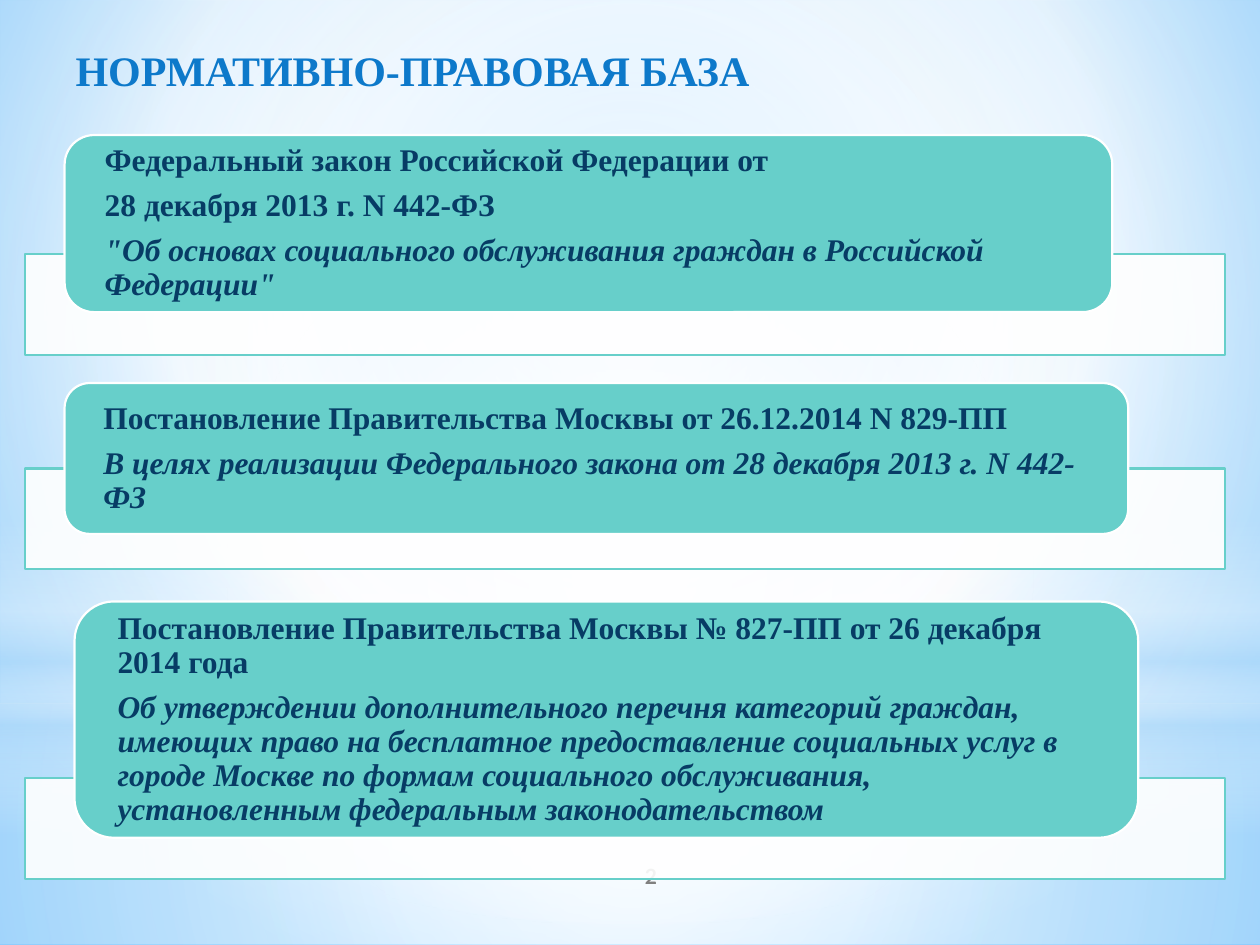
from lxml import etree
from pptx import Presentation
from pptx.dml.color import RGBColor
from pptx.enum import shapes, text
from pptx.oxml.ns import qn
from pptx.util import Pt

BLUE = RGBColor(0x0D, 0x79, 0xCA)
NAVY = RGBColor(0x07, 0x3C, 0x65)
TEAL = RGBColor(0x67, 0xCF, 0xCA)
WHITE = RGBColor(0xFF, 0xFF, 0xFF)
SKY = RGBColor(0xB4, 0xDC, 0xFA)
PALE = RGBColor(0x9E, 0xD5, 0xFF)
DEEP = RGBColor(0x5B, 0xB9, 0xFF)
GREY = RGBColor(0x80, 0x80, 0x80)
SERIF = "Times New Roman"
BOX = shapes.MSO_SHAPE.RECTANGLE
OVAL = shapes.MSO_SHAPE.OVAL
ROUND = shapes.MSO_SHAPE.ROUNDED_RECTANGLE


def shade(grad, stops, focus=None):
    """Fill a gradFill element: radial around focus, or top to bottom."""
    for kid in list(grad):
        grad.remove(kid)
    rows = etree.SubElement(grad, qn("a:gsLst"))
    for pos, tint, alpha in stops:
        stop = etree.SubElement(rows, qn("a:gs"), pos=str(pos * 1000))
        hue = etree.SubElement(stop, qn("a:srgbClr"), val=str(tint))
        etree.SubElement(hue, qn("a:alpha"), val=str(alpha * 1000))
    if focus:
        way = etree.SubElement(grad, qn("a:path"))
        way.set("path", "circle")
        rect = etree.SubElement(way, qn("a:fillToRect"))
        for side, value in zip("ltrb", focus):
            rect.set(side, str(value * 1000))
    else:
        etree.SubElement(grad, qn("a:lin"), ang="5400000", scaled="0")


def write(frame, words, size=18, font=SERIF, color=NAVY, italic=False,
          align=text.PP_ALIGN.LEFT, line=None, after=None, first=True):
    par = frame.paragraphs[0] if first else frame.add_paragraph()
    par.alignment, par.line_spacing, par.space_after = align, line, after
    run = par.add_run()
    run.text = words
    run.font.size, run.font.name = Pt(size), font
    run.font.bold, run.font.italic = True, italic
    run.font.color.rgb = color


deck = Presentation()
deck.slide_width, deck.slide_height = Pt(720), Pt(540)
slide = deck.slides.add_slide(deck.slide_layouts[5])

# Background
slide.background.fill.gradient()
shade(slide.element.find(".//" + qn("a:gradFill")),
      [(0, PALE, 100), (60, WHITE, 100), (100, DEEP, 100)], (20, 10, 20, 60))

# Soft light layers: shape, top, height, stops, focus
MID = (50, 50, 50, 50)
layers = [
    (BOX, 402, 138, [(0, WHITE, 91), (37, WHITE, 76), (100, SKY, 79)], MID),
    (BOX, 0, 402, [(0, WHITE, 89), (48, WHITE, 62), (100, SKY, 79)], MID),
    (BOX, 297, 180, [(0, WHITE, 0), (29, WHITE, 30), (45, SKY, 40),
                     (55, WHITE, 26), (65, SKY, 60), (100, WHITE, 0)], None),
    (OVAL, 126, 402, [(0, WHITE, 100), (56, WHITE, 0)], MID),
]
for kind, top, high, stops, focus in layers:
    glow = slide.shapes.add_shape(kind, 0, Pt(top), Pt(720), Pt(high))
    glow.shadow.inherit = False
    glow.line.fill.background()
    glow.fill.gradient()
    shade(glow.element.spPr.find(qn("a:gradFill")), stops, focus)

# Title, in front of the layers
title = slide.shapes.title
title.left, title.top, title.width, title.height = Pt(36), Pt(21.6), Pt(648), Pt(49.7)
title.text_frame.vertical_anchor = text.MSO_ANCHOR.TOP
write(title.text_frame, "НОРМАТИВНО-ПРАВОВАЯ БАЗА", size=24, color=BLUE)
title.element.getparent().append(title.element)

# Page number, partly under the last bar
page = slide.shapes.add_textbox(Pt(300), Pt(486), Pt(144), Pt(28.8)).text_frame
page.word_wrap = True
page.vertical_anchor = text.MSO_ANCHOR.MIDDLE
write(page, "2", size=12, font="Lato", color=GREY, align=text.PP_ALIGN.CENTER)

# Laws: bar top, card left, top, width, height, headings, subject
laws = [
    (145.2, 36.9, 77.2, 598.7, 101.2,
     ["Федеральный закон Российской Федерации от", "28 декабря 2013 г. N 442-ФЗ"],
     "\"Об основах социального обслуживания граждан в Российской Федерации\""),
    (267.8, 36.9, 218.9, 607.8, 86.2,
     ["Постановление Правительства Москвы от 26.12.2014 N 829-ПП"],
     "В целях реализации Федерального закона от 28 декабря 2013 г. N 442-ФЗ"),
    (444.8, 42.6, 343.7, 607.8, 135,
     ["Постановление Правительства Москвы № 827-ПП от 26 декабря 2014 года"],
     "Об утверждении дополнительного перечня категорий граждан, имеющих право "
     "на бесплатное предоставление социальных услуг в городе Москве "
     "по формам социального обслуживания, установленным "
     "федеральным законодательством"),
]
for low, left, top, wide, high, heads, topic in laws:
    bar = slide.shapes.add_shape(BOX, Pt(14.2), Pt(low), Pt(686), Pt(57.6))
    card = slide.shapes.add_shape(ROUND, Pt(left), Pt(top), Pt(wide), Pt(high))
    for item, fill, edge in ((bar, WHITE, TEAL), (card, TEAL, WHITE)):
        item.shadow.inherit = False
        item.fill.solid()
        item.fill.fore_color.rgb = fill
        item.line.color.rgb = edge
        item.line.width = Pt(1.25)
    hue = bar.element.spPr.find(qn("a:solidFill")).find(qn("a:srgbClr"))
    etree.SubElement(hue, qn("a:alpha"), val="90000")

    frame = card.text_frame
    frame.word_wrap = True
    frame.vertical_anchor = text.MSO_ANCHOR.MIDDLE
    frame.margin_left = frame.margin_right = Pt(18)
    frame.margin_top = frame.margin_bottom = 0
    for i, words in enumerate(heads + [topic]):
        write(frame, words, italic=words == topic, line=0.9, after=Pt(6.3), first=i == 0)

deck.save("out.pptx")
